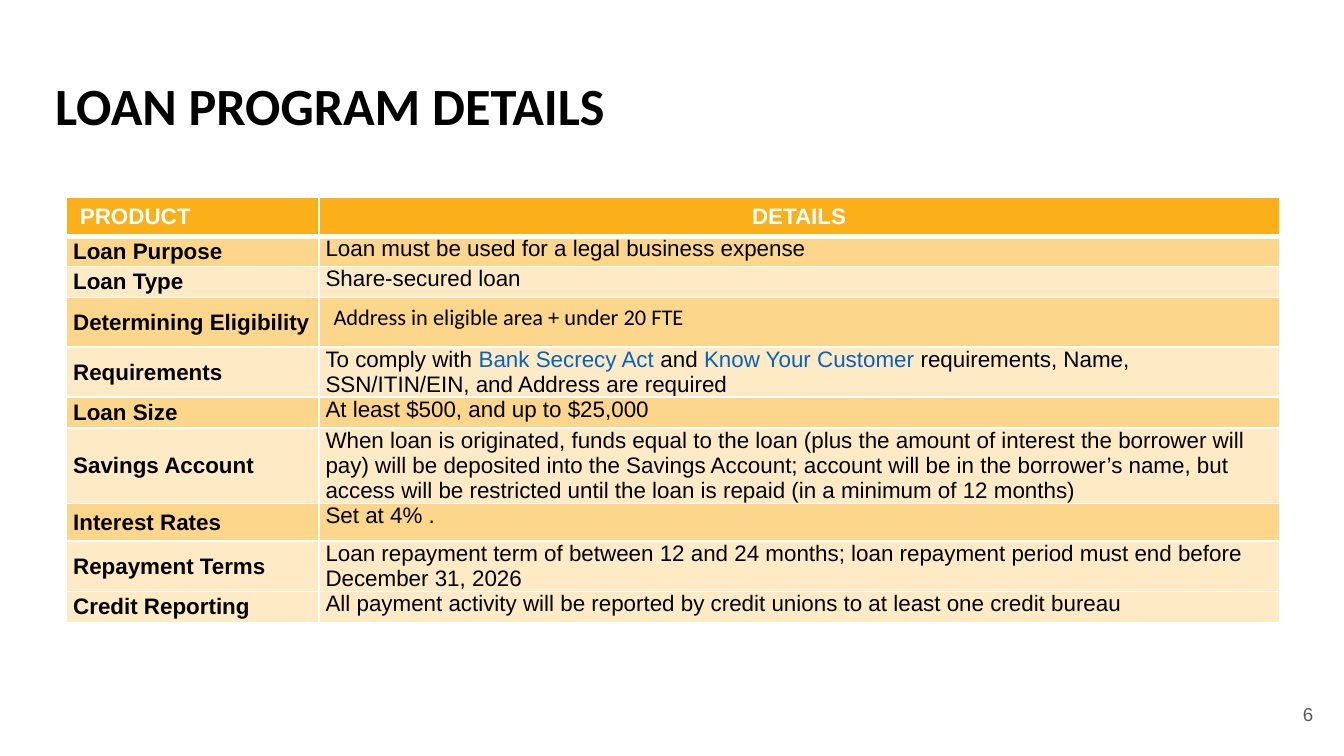
from dataclasses import dataclass

from lxml import etree
from pptx import Presentation
from pptx.dml.color import RGBColor
from pptx.enum import text
from pptx.oxml import ns
from pptx.util import Pt

WHITE = RGBColor(0xFF, 0xFF, 0xFF)
BLACK = RGBColor(0x00, 0x00, 0x00)
ORANGE = RGBColor(0xFB, 0xAF, 0x19)
AMBER = RGBColor(0xFC, 0xAF, 0x18)
LINK_BLUE = RGBColor(0x05, 0x62, 0xC1)
GRAY = RGBColor(0x59, 0x59, 0x59)


@dataclass(frozen=True)
class Fill:
    color: RGBColor
    opacity: int = 100


HEADER = Fill(ORANGE)
DARK = Fill(ORANGE, 50)
LIGHT = Fill(AMBER, 25)


@dataclass(frozen=True)
class Run:
    text: str
    color: RGBColor = BLACK


@dataclass(frozen=True)
class Row:
    label: str
    details: tuple[Run, ...]
    height: float
    fill: Fill
    font: str = "Arial"
    margins: tuple[float, float] = (3.6, 0)
    indent: float = 0


ROWS = [
    Row("Loan Purpose", (Run("Loan must be used for a legal business expense"),), 16.3, DARK),
    Row("Loan Type", (Run("Share-secured loan"),), 16.6, LIGHT),
    Row("Determining Eligibility", (Run("Address in eligible area + under 20 FTE"),),
        26.6, DARK, "Calibri", (7.2, 3.6), 0.7),
    Row("Requirements", (
        Run("To comply with "),
        Run("Bank Secrecy Act ", LINK_BLUE),
        Run("and "),
        Run("Know Your Customer ", LINK_BLUE),
        Run("requirements, Name, SSN/ITIN/EIN, and Address are required"),
    ), 26.6, LIGHT),
    Row("Loan Size", (Run("At least $500, and up to $25,000"),), 16.6, DARK),
    Row("Savings Account", (Run(
        "When loan is originated, funds equal to the loan (plus the amount of interest "
        "the borrower will pay) will be deposited into the Savings Account; account will "
        "be in the borrower’s name, but access will be restricted until the loan is "
        "repaid (in a minimum of 12 months)"),), 40.3, LIGHT),
    Row("Interest Rates", (Run("Set at 4% ."),), 20.2, DARK),
    Row("Repayment Terms", (Run(
        "Loan repayment term of between 12 and 24 months; loan repayment period must end "
        "before December 31, 2026"),), 26.6, LIGHT),
    Row("Credit Reporting", (Run(
        "All payment activity will be reported by credit unions to at least one credit "
        "bureau"),), 16.6, LIGHT),
]
HEADER_HEIGHT = 20.6
COLUMN_WIDTHS = (135.2, 514.6)


def set_margins(target, horizontal: float, vertical: float) -> None:
    target.margin_left = target.margin_right = Pt(horizontal)
    target.margin_top = target.margin_bottom = Pt(vertical)


def set_font(font, name: str, size: float, bold: bool) -> None:
    font.name = name
    font.size = Pt(size)
    font.bold = bold


def style_cell(cell, fill: Fill, top: float = 1, bottom: float = 1) -> None:
    cell.fill.solid()
    cell.fill.fore_color.rgb = fill.color
    properties = cell._tc.get_or_add_tcPr()
    if fill.opacity < 100:
        color = properties.find(".//" + ns.qn("a:srgbClr"))
        etree.SubElement(color, ns.qn("a:alpha"), val=str(fill.opacity * 1000))
    borders = {"lnL": 1, "lnR": 1, "lnT": top, "lnB": bottom}
    for position, (tag, width) in enumerate(borders.items()):
        line = etree.Element(ns.qn(f"a:{tag}"), w=str(Pt(width)))
        solid = etree.SubElement(line, ns.qn("a:solidFill"))
        etree.SubElement(solid, ns.qn("a:srgbClr"), val=str(WHITE))
        properties.insert(position, line)


def write_cell(cell, runs: tuple[Run, ...], font: str, bold: bool):
    paragraph = cell.text_frame.paragraphs[0]
    for item in runs:
        run = paragraph.add_run()
        run.text = item.text
        set_font(run.font, font, 12, bold)
        run.font.color.rgb = item.color
    return paragraph


def add_title(slide) -> None:
    title = slide.shapes.title
    title.left, title.top, title.width, title.height = Pt(24.5), Pt(35.3), Pt(671), Pt(45.4)
    frame = title.text_frame
    frame.text = "LOAN PROGRAM DETAILS"
    frame.word_wrap = True
    frame.vertical_anchor = text.MSO_ANCHOR.MIDDLE
    set_margins(frame, 5, 2.9)
    paragraph = frame.paragraphs[0]
    paragraph.alignment = text.PP_ALIGN.LEFT
    paragraph.line_spacing = 0.9
    set_font(paragraph.font, "Calibri", 28, True)
    paragraph.font.color.rgb = BLACK


def add_program_table(slide) -> None:
    heights = [HEADER_HEIGHT] + [row.height for row in ROWS]
    table = slide.shapes.add_table(
        len(heights), len(COLUMN_WIDTHS), Pt(35.6), Pt(105.8),
        Pt(sum(COLUMN_WIDTHS)), Pt(sum(heights))).table
    table.horz_banding = False
    for column, width in zip(table.columns, COLUMN_WIDTHS):
        column.width = Pt(width)
    for table_row, height in zip(table.rows, heights):
        table_row.height = Pt(height)

    alignments = (text.PP_ALIGN.LEFT, text.PP_ALIGN.CENTER)
    for index, heading in enumerate(("PRODUCT", "DETAILS")):
        cell = table.cell(0, index)
        style_cell(cell, HEADER, bottom=3)
        set_margins(cell, 7.2, 3.6)
        paragraph = write_cell(cell, (Run(heading, WHITE),), "Arial", True)
        paragraph.alignment = alignments[index]

    for index, row in enumerate(ROWS, start=1):
        label, details = table.cell(index, 0), table.cell(index, 1)
        for cell in (label, details):
            style_cell(cell, row.fill, top=3 if index == 1 else 1)
        set_margins(label, 3.6, 0)
        label.vertical_anchor = text.MSO_ANCHOR.MIDDLE
        write_cell(label, (Run(row.label),), "Arial", True)
        set_margins(details, *row.margins)
        paragraph = write_cell(details, row.details, row.font, False)
        if row.indent:
            paragraph._p.get_or_add_pPr().set("marL", str(Pt(row.indent)))


def add_page_number(slide) -> None:
    frame = slide.shapes.add_textbox(Pt(667.4), Pt(367.2), Pt(43.2), Pt(31)).text_frame
    frame.text = "6"
    frame.word_wrap = True
    frame.vertical_anchor = text.MSO_ANCHOR.MIDDLE
    set_margins(frame, 7.2, 7.2)
    paragraph = frame.paragraphs[0]
    paragraph.alignment = text.PP_ALIGN.RIGHT
    set_font(paragraph.font, "Arial", 10, False)
    paragraph.font.color.rgb = GRAY


def main() -> None:
    presentation = Presentation()
    presentation.slide_width, presentation.slide_height = Pt(720), Pt(405)
    slide = presentation.slides.add_slide(presentation.slide_layouts[5])
    add_program_table(slide)
    add_title(slide)
    add_page_number(slide)
    presentation.save("out.pptx")


if __name__ == "__main__":
    main()
